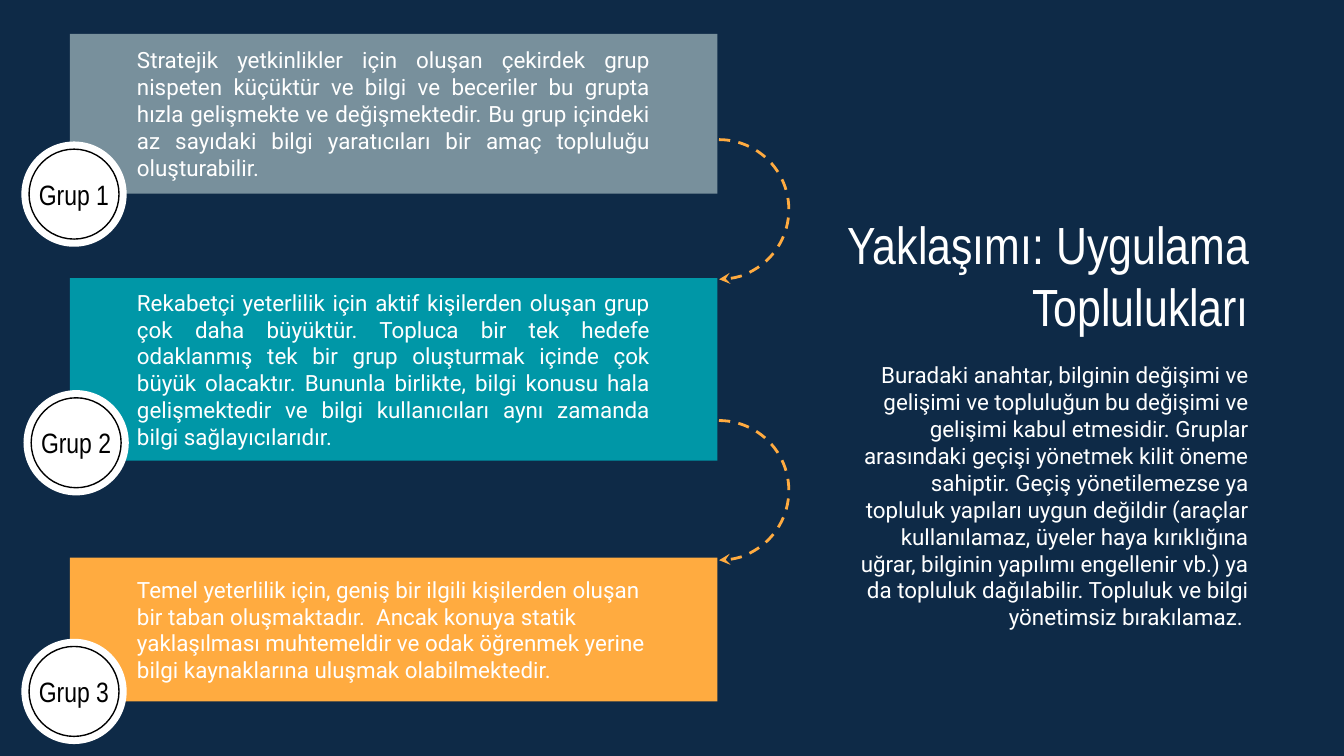
from dataclasses import dataclass

from lxml.etree import SubElement
from pptx import Presentation
from pptx.dml.color import RGBColor
from pptx.enum.dml import MSO_LINE
from pptx.enum.shapes import MSO_SHAPE
from pptx.enum.text import MSO_ANCHOR, PP_ALIGN
from pptx.oxml.ns import qn
from pptx.util import Cm, Pt


@dataclass(frozen=True)
class Theme:
    background: str = "0E2A47"
    light: str = "FFFFFF"
    dark: str = "000000"
    gray: str = "78909C"
    teal: str = "0097A7"
    orange: str = "FFAB40"
    heading_font: str = "Arial Narrow"
    body_font: str = "Roboto"
    title_size: int = 28
    badge_size: int = 15
    body_size: int = 12


THEME = Theme()

TITLE = "Yaklaşımı: Uygulama Toplulukları"
SUMMARY = (
    "Buradaki anahtar, bilginin değişimi ve gelişimi ve topluluğun bu değişimi ve "
    "gelişimi kabul etmesidir. Gruplar arasındaki geçişi yönetmek kilit öneme "
    "sahiptir. Geçiş yönetilemezse ya topluluk yapıları uygun değildir (araçlar "
    "kullanılamaz, üyeler haya kırıklığına uğrar, bilginin yapılımı engellenir vb.) "
    "ya da topluluk dağılabilir. Topluluk ve bilgi yönetimsiz bırakılamaz. "
)
# Lengths in cm
GROUPS = [
    dict(label="Grup 1", color=THEME.gray, top=0.64, height=3.02,
         badge_x=1.4, align=PP_ALIGN.JUSTIFY,
         text="Stratejik yetkinlikler için oluşan çekirdek grup nispeten küçüktür ve "
              "bilgi ve beceriler bu grupta hızla gelişmekte ve değişmektedir. Bu grup "
              "içindeki az sayıdaki bilgi yaratıcıları bir amaç topluluğu oluşturabilir."),
    dict(label="Grup 2", color=THEME.teal, top=5.26, height=3.45,
         badge_x=1.44, align=PP_ALIGN.JUSTIFY,
         text="Rekabetçi yeterlilik için aktif kişilerden oluşan grup çok daha büyüktür. "
              "Topluca bir tek hedefe odaklanmış tek bir grup oluşturmak içinde çok büyük "
              "olacaktır. Bununla birlikte, bilgi konusu hala gelişmektedir ve bilgi "
              "kullanıcıları aynı zamanda bilgi sağlayıcılarıdır."),
    dict(label="Grup 3", color=THEME.orange, top=10.54, height=2.72,
         badge_x=1.4, align=PP_ALIGN.LEFT,
         text="Temel yeterlilik için, geniş bir ilgili kişilerden oluşan bir taban "
              "oluşmaktadır.  Ancak konuya statik yaklaşılması muhtemeldir ve odak "
              "öğrenmek yerine bilgi kaynaklarına uluşmak olabilmektedir."),
]
CARD_LEFT, CARD_WIDTH = 1.32, 12.24
BADGE_Y, BADGE_STEP = 3.67, 4.7
BADGE_OUTER, BADGE_INNER = 1.99, 1.7
ARC_LEFT, ARC_SIZE = 12.27, 2.64
ARC_TOPS = (2.64, 7.95)


def write(shape, text, *, font=THEME.body_font, size=THEME.body_size,
          color=THEME.light, align=PP_ALIGN.LEFT, side=0.25, wrap=True):
    frame = shape.text_frame
    frame.word_wrap = wrap
    frame.vertical_anchor = MSO_ANCHOR.MIDDLE
    frame.margin_left = frame.margin_right = Cm(side)
    frame.margin_top = frame.margin_bottom = Cm(0.25)
    paragraph = frame.paragraphs[0]
    paragraph.alignment = align
    run = paragraph.add_run()
    run.text = text
    run.font.name = font
    run.font.size = Pt(size)
    run.font.color.rgb = RGBColor.from_string(color)


def add_shape(slide, kind, left, top, width, height, *, fill=None, line=None, weight=0.75):
    shape = slide.shapes.add_shape(kind, Cm(left), Cm(top), Cm(width), Cm(height))
    shape.shadow.inherit = False
    if fill:
        shape.fill.solid()
        shape.fill.fore_color.rgb = RGBColor.from_string(fill)
    else:
        shape.fill.background()
    if line:
        shape.line.color.rgb = RGBColor.from_string(line)
        shape.line.width = Pt(weight)
    else:
        shape.line.fill.background()
    return shape


def add_circle(slide, x, y, size, **style):
    """Place a circle by its centre."""
    return add_shape(slide, MSO_SHAPE.OVAL, x - size / 2, y - size / 2, size, size, **style)


def add_badge(slide, label, x, y):
    add_circle(slide, x, y, BADGE_OUTER, fill=THEME.light)
    ring = add_circle(slide, x, y, BADGE_INNER, fill=THEME.light, line=THEME.dark)
    write(ring, label, font=THEME.heading_font, size=THEME.badge_size,
          color=THEME.dark, align=PP_ALIGN.CENTER, side=0, wrap=False)


def add_transition(slide, top):
    """Draw the dashed half circle that leads from one card to the next."""
    arc = add_shape(slide, MSO_SHAPE.ARC, ARC_LEFT, top, ARC_SIZE, ARC_SIZE,
                    line=THEME.orange, weight=1.5)
    arc.adjustments[0] = 162  # 270 degrees
    arc.adjustments[1] = 53.96  # just short of 90 degrees
    arc.line.dash_style = MSO_LINE.DASH
    SubElement(arc.line._get_or_add_ln(), qn("a:tailEnd"), type="stealth")


def add_text(slide, text, left, top, width, height, **style):
    box = slide.shapes.add_textbox(Cm(left), Cm(top), Cm(width), Cm(height))
    write(box, text, **style)


def main():
    deck = Presentation()
    deck.slide_width, deck.slide_height = Cm(25.4), Cm(14.29)
    slide = deck.slides.add_slide(deck.slide_layouts[6])
    slide.background.fill.solid()
    slide.background.fill.fore_color.rgb = RGBColor.from_string(THEME.background)

    for group in GROUPS:
        card = add_shape(slide, MSO_SHAPE.RECTANGLE, CARD_LEFT, group["top"],
                         CARD_WIDTH, group["height"], fill=group["color"])
        write(card, group["text"], align=group["align"], side=1.27)
    for top in ARC_TOPS:
        add_transition(slide, top)
    for row, group in enumerate(GROUPS):
        add_badge(slide, group["label"], group["badge_x"], BADGE_Y + row * BADGE_STEP)

    add_text(slide, TITLE, 15.47, 4.01, 8.38, 2.36, font=THEME.heading_font,
             size=THEME.title_size, align=PP_ALIGN.RIGHT)
    add_text(slide, SUMMARY, 15.8, 7.65, 8.05, 3.45, align=PP_ALIGN.RIGHT)
    deck.save("out.pptx")


if __name__ == "__main__":
    main()
